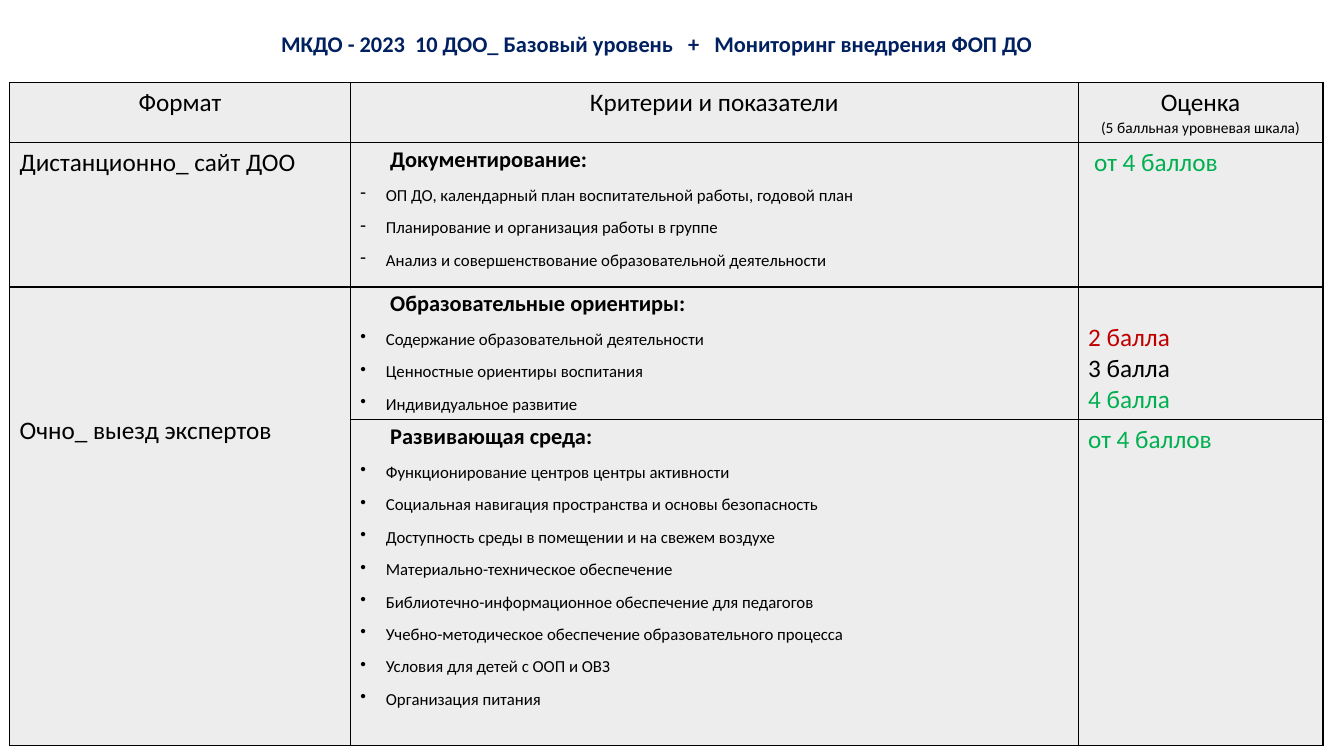
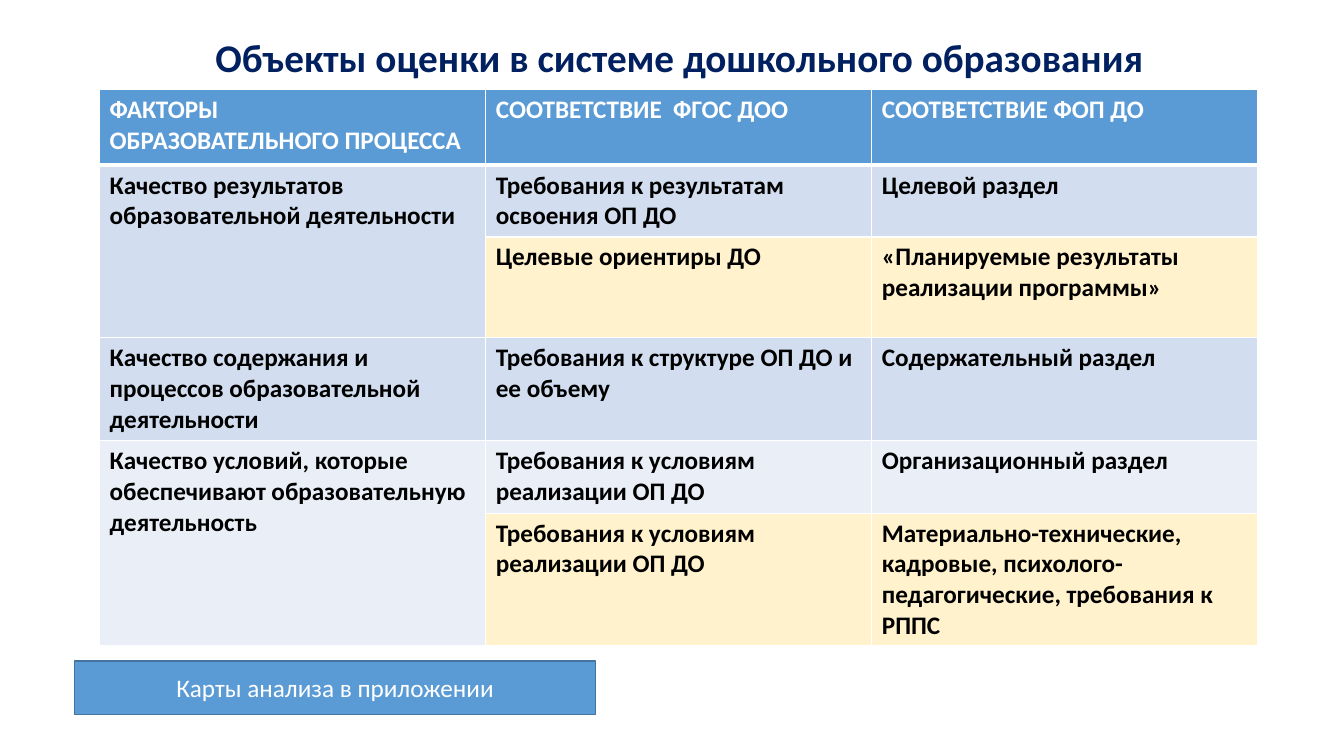
"""Build two slides on assessing the quality of preschool education."""
from lxml import etree
from pptx import Presentation
from pptx.dml.color import RGBColor
from pptx.enum.shapes import MSO_SHAPE
from pptx.enum.text import MSO_ANCHOR, PP_ALIGN
from pptx.oxml.ns import qn
from pptx.util import Cm, Pt

RECTANGLE = MSO_SHAPE.RECTANGLE
MIDDLE = MSO_ANCHOR.MIDDLE
LEFT, CENTER = PP_ALIGN.LEFT, PP_ALIGN.CENTER

FONT = "Calibri"
NAVY, BLACK, WHITE = "002060", "000000", "FFFFFF"
GREEN, RED, GREY = "00B050", "C00000", "EDEDED"
BLUE, BLUE_EDGE = "5B9BD5", "43739E"
BAND, PALE, CREAM = "D2DEEF", "EAEFF7", "FFF2CC"


def paint(fill, color):
    """Make a shape, cell, line or font fill solid."""
    fill.solid()
    fill.fore_color.rgb = RGBColor.from_string(color)


def write(frame, text, size=18, color=BLACK, bold=False, align=LEFT,
          spacing=None, before=None, indent=0, bullet=None):
    """Add a paragraph, filling the first one while it is empty."""
    para = frame.paragraphs[0]
    if para.runs:
        para = frame.add_paragraph()
    para.alignment = align
    if spacing:
        para.line_spacing = spacing
    if before:
        para.space_before = Pt(before)
    properties = para._p.get_or_add_pPr()
    properties.set("marL", str(Cm(indent)))
    properties.set("indent", str(-Cm(indent) if bullet else 0))
    if bullet:
        etree.SubElement(properties, qn("a:buChar")).set("char", bullet)
    span = para.add_run()
    span.text = text
    span.font.name = FONT
    span.font.size = Pt(size)
    span.font.bold = bold
    paint(span.font.fill, color)


heading = dict(size=16, bold=True, spacing=0.9, indent=0.75)
item = dict(size=12, spacing=0.9, before=10, indent=0.64)
dash = dict(item, bullet="-")
dot = dict(item, bullet="•")
centered = dict(align=CENTER)
green = dict(color=GREEN)
strong = dict(bold=True)
header = dict(bold=True, color=WHITE)

criteria_rows = [
    [[("Формат", centered)],
     [("Критерии и показатели", centered)],
     [("Оценка", centered),
      ("(5 балльная уровневая шкала)", dict(size=11, align=CENTER))]],
    [[("Дистанционно_ сайт ДОО", {})],
     [("Документирование:", heading),
      ("ОП ДО, календарный план воспитательной работы, годовой план", dash),
      ("Планирование и организация работы в группе", dash),
      ("Анализ и совершенствование образовательной деятельности", dash)],
     [("от 4 баллов", dict(green, indent=0.15))]],
    [[("Очно_ выезд экспертов", {})],
     [("Образовательные ориентиры:", heading),
      ("Содержание образовательной деятельности", dot),
      ("Ценностные ориентиры воспитания", dot),
      ("Индивидуальное развитие", dot)],
     [("2 балла", dict(color=RED)), ("3 балла", {}), ("4 балла", green)]],
    [[],
     [("Развивающая среда:", heading),
      ("Функционирование центров центры активности", dot),
      ("Социальная навигация пространства и основы безопасность", dot),
      ("Доступность среды в помещении и на свежем воздухе", dot),
      ("Материально-техническое обеспечение", dot),
      ("Библиотечно-информационное обеспечение для педагогов", dot),
      ("Учебно-методическое обеспечение образовательного процесса", dot),
      ("Условия для детей с ООП и ОВЗ", dot),
      ("Организация питания", dot)],
     [("от 4 баллов", green)]],
]

factor_rows = [
    [[("ФАКТОРЫ", header), ("ОБРАЗОВАТЕЛЬНОГО ПРОЦЕССА", header)],
     [("СООТВЕТСТВИЕ  ФГОС ДОО", header)],
     [("СООТВЕТСТВИЕ ФОП ДО", header)]],
    [[("Качество результатов образовательной деятельности", strong)],
     [("Требования к результатам освоения ОП ДО", strong)],
     [("Целевой раздел", strong)]],
    [[],
     [("Целевые ориентиры ДО", strong)],
     [("«Планируемые результаты реализации программы»", strong)]],
    [[("Качество содержания и процессов образовательной деятельности", strong)],
     [("Требования к структуре ОП ДО и ее объему", strong)],
     [("Содержательный раздел", strong)]],
    [[("Качество условий, которые обеспечивают образовательную деятельность",
       strong)],
     [("Требования к условиям реализации ОП ДО", strong)],
     [("Организационный раздел", strong)]],
    [[],
     [("Требования к условиям реализации ОП ДО", strong)],
     [("Материально-технические, кадровые, психолого-педагогические, "
       "требования к РППС", strong)]],
]

layouts = [
    dict(title="МКДО - 2023  10 ДОО_ Базовый уровень   +   "
               "Мониторинг внедрения ФОП ДО",
         title_size=16, title_at=(1.64, 0.53, 29.82, 1.2),
         corner=(0.24, 2.08), columns=[8.59, 18.34, 6.17],
         heights=[1.52, 3.63, 3.35, 8.2], rows=criteria_rows,
         fills=[GREY] * 4, merged_from=[2], border=BLACK, header_line=1,
         top_margins={(2, 0): 3.23, (2, 2): 0.9}),
    dict(title="Объекты оценки в системе дошкольного образования",
         title_size=28, title_at=(2.51, 0.76, 29.21, 1.5),
         corner=(2.51, 2.26), columns=[9.73] * 3,
         heights=[1.9, 1.81, 2.54, 2.59, 1.83, 3.33], rows=factor_rows,
         fills=[BLUE, BAND, CREAM, BAND, PALE, CREAM], merged_from=[1, 4],
         border=WHITE, header_line=3, top_margins={}),
]

deck = Presentation()
deck.slide_width, deck.slide_height = Cm(33.87), Cm(19.05)

for layout in layouts:
    page = deck.slides.add_slide(deck.slide_layouts[6])
    title = page.shapes.add_textbox(*map(Cm, layout["title_at"])).text_frame
    title.word_wrap = True
    title.vertical_anchor = MIDDLE
    write(title, layout["title"], size=layout["title_size"], color=NAVY,
          bold=True, align=CENTER, spacing=0.9)

    columns, heights = layout["columns"], layout["heights"]
    table = page.shapes.add_table(
        len(heights), len(columns), *map(Cm, layout["corner"]),
        Cm(sum(columns)), Cm(sum(heights))).table
    table.first_row = table.horz_banding = False
    for column, width in zip(table.columns, columns):
        column.width = Cm(width)
    for row, height in zip(table.rows, heights):
        row.height = Cm(height)

    for r, row in enumerate(layout["rows"]):
        for c, lines in enumerate(row):
            cell = table.cell(r, c)
            paint(cell.fill, layout["fills"][r])
            if (r, c) in layout["top_margins"]:
                cell.margin_top = Cm(layout["top_margins"][r, c])
            for text, style in lines:
                write(cell.text_frame, text, **style)
            properties = cell._tc.get_or_add_tcPr()
            for position, side in enumerate("LRTB"):
                header_edge = (r, side) in ((0, "B"), (1, "T"))
                weight = layout["header_line"] if header_edge else 1
                edge = etree.Element(qn(f"a:ln{side}"), w=str(Pt(weight)))
                solid = etree.SubElement(edge, qn("a:solidFill"))
                etree.SubElement(solid, qn("a:srgbClr"), val=layout["border"])
                properties.insert(position, edge)

    for r in layout["merged_from"]:
        paint(table.cell(r + 1, 0).fill, layout["fills"][r])
        table.cell(r, 0).merge(table.cell(r + 1, 0))

box = page.shapes.add_shape(RECTANGLE, Cm(1.88), Cm(16.66), Cm(13.13), Cm(1.35))
box.shadow.inherit = False
paint(box.fill, BLUE)
paint(box.line.fill, BLUE_EDGE)
box.line.width = Pt(1)
box.text_frame.word_wrap = True
box.text_frame.vertical_anchor = MIDDLE
write(box.text_frame, "Карты анализа в приложении", color=WHITE, align=CENTER)

deck.save("out.pptx")
